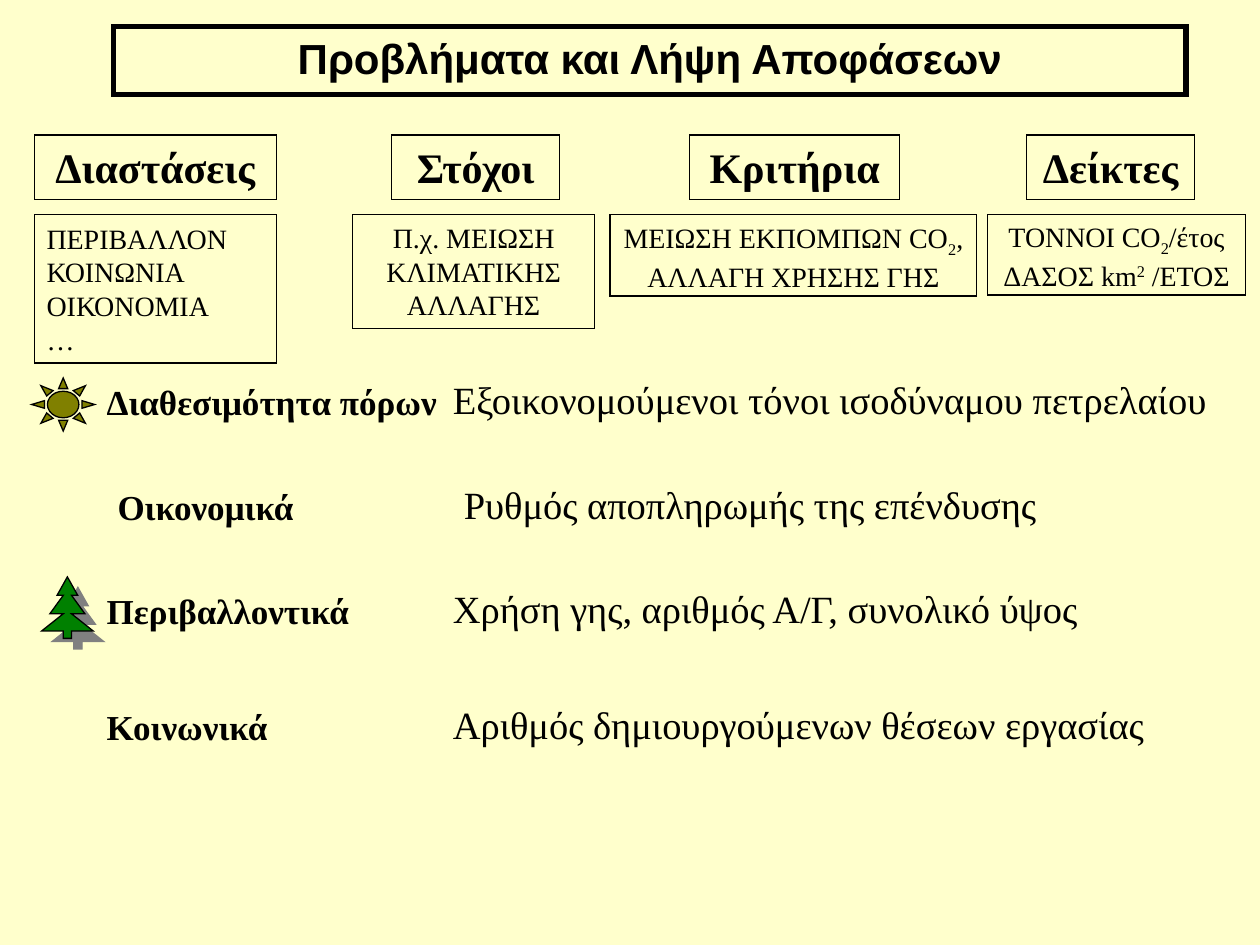
from lxml import etree
from pptx import Presentation
from pptx.dml.color import RGBColor
from pptx.enum.shapes import MSO_SHAPE
from pptx.enum.text import MSO_ANCHOR, PP_ALIGN
from pptx.oxml.ns import qn
from pptx.util import Cm, Pt

COLORS = {"background": "FFFFCC", "ink": "000000", "sun": "808000",
          "tree": "008000", "shadow": "808080"}
SERIF = "Times New Roman"

# Header (text, left, width), then detail (left, width, height, paragraphs).
# A run is a text with its baseline shift in percent.
COLUMNS = [
    (("Διαστάσεις", 0.69, 4.88),
     (0.69, 4.88, 3.0, ["ΠΕΡΙΒΑΛΛΟΝ", "ΚΟΙΝΩΝΙΑ", "ΟΙΚΟΝΟΜΙΑ", "…"])),
    (("Στόχοι", 7.9, 3.38),
     (7.11, 4.88, 2.31, ["Π.χ. ΜΕΙΩΣΗ ΚΛΙΜΑΤΙΚΗΣ ΑΛΛΑΓΗΣ"])),
    (("Κριτήρια", 13.9, 4.24),
     (12.3, 7.39, 1.65, [[("ΜΕΙΩΣΗ ΕΚΠΟΜΠΩΝ CO", 0), ("2", -25), (",", 0)],
                         "ΑΛΛΑΓΗ ΧΡΗΣΗΣ ΓΗΣ"])),
    (("Δείκτες", 20.7, 3.38),
     (19.91, 5.2, 1.63, [[("ΤΟΝΝΟΙ CO", 0), ("2", -25), ("/έτος", 0)],
                         [("ΔΑΣΟΣ km", 0), ("2", 30), (" /ΕΤΟΣ", 0)]])),
]

# Top, indent, label, value
ROWS = [
    (7.42, 0, "Διαθεσιμότητα πόρων", "Εξοικονομούμενοι τόνοι ισοδύναμου πετρελαίου"),
    (9.53, 0.22, "Οικονομικά", "Ρυθμός αποπληρωμής της επένδυσης"),
    (11.63, 0, "Περιβαλλοντικά", "Χρήση γης, αριθμός Α/Γ, συνολικό ύψος"),
    (13.97, 0, "Κοινωνικά", "Αριθμός δημιουργούμενων θέσεων εργασίας"),
]


def color(name):
    return RGBColor.from_string(COLORS[name])


def style(sp, fill=None, width=0.75):
    sp.shadow.inherit = False
    if fill:
        sp.fill.solid()
        sp.fill.fore_color.rgb = color(fill)
    else:
        sp.fill.background()
    sp.line.color.rgb = color("ink")
    sp.line.width = Pt(width)
    # Sharp corners
    etree.SubElement(sp._element.spPr.find(qn("a:ln")), qn("a:miter"), lim="800000")


def write(sp, paragraphs, size, bold=False, font=SERIF, align=PP_ALIGN.LEFT,
          side=0.25, bottom=0.15):
    tf = sp.text_frame
    tf.word_wrap = True
    tf.vertical_anchor = MSO_ANCHOR.BOTTOM
    tf.margin_left = tf.margin_right = Cm(side)
    tf.margin_top, tf.margin_bottom = Cm(0), Cm(bottom)
    for i, runs in enumerate(paragraphs):
        p = tf.add_paragraph() if i else tf.paragraphs[0]
        p.alignment = align
        p.font.name, p.font.size, p.font.bold = font, Pt(size), bold
        p.font.color.rgb = color("ink")
        for text, shift in [(runs, 0)] if isinstance(runs, str) else runs:
            r = p.add_run()
            r.text = text
            if shift:
                r.font._element.set("baseline", str(shift * 1000))


def add_box(s, x, y, w, h, paragraphs, size, line=0.75, **options):
    sp = s.shapes.add_shape(MSO_SHAPE.RECTANGLE, Cm(x), Cm(y), Cm(w), Cm(h))
    style(sp, width=line)
    write(sp, paragraphs, size, **options)


def add_column(s, y, header, detail):
    text, x, w = header
    add_box(s, x, y, w, 1.3, [text], 24, bold=True, align=PP_ALIGN.CENTER)
    x, w, h, paragraphs = detail
    listing = len(paragraphs) > 2
    add_box(s, x, y + 1.6, w, h, paragraphs, 16,
            align=PP_ALIGN.LEFT if listing else PP_ALIGN.CENTER,
            side=0.25 if listing else 0.2,
            bottom=0.07 if len(paragraphs) == 2 else 0.15)


def add_row(s, x, y, label, value):
    for dx, w, text, size, bold in ((0, 8, label, 20, True),
                                    (6.98, 16.2, value, 22, False)):
        sp = s.shapes.add_textbox(Cm(x + dx), Cm(y), Cm(w), Cm(1.27))
        write(sp, [text], size, bold=bold, bottom=0.17)


def add_sun(s, x, y, w, h):
    sp = s.shapes.add_shape(MSO_SHAPE.SUN, Cm(x), Cm(y), Cm(w), Cm(h))
    style(sp, "sun")


def add_tree(s, x, y, w, h):
    # Right half from the tip down, as shares of the box; the left mirrors it
    half = [(0.2, 0.3), (0.08, 0.3), (0.34, 0.6), (0.08, 0.6),
            (0.5, 0.88), (0.08, 0.88), (0.08, 1)]
    outline = half + [(-dx, dy) for dx, dy in reversed(half)]
    points = [(Cm(x + w * (0.5 + dx)), Cm(y + h * dy)) for dx, dy in outline]
    builder = s.shapes.build_freeform(Cm(x + w / 2), Cm(y))
    builder.add_line_segments(points, close=True)
    sp = builder.convert_to_shape()
    style(sp, "tree")
    effects = sp._element.spPr.find(qn("a:effectLst"))
    shadow = etree.SubElement(effects, qn("a:outerShdw"), dist=str(Pt(8.5)),
                              dir="2700000", algn="ctr", rotWithShape="0")
    etree.SubElement(shadow, qn("a:srgbClr"), val=COLORS["shadow"])


def main():
    prs = Presentation()
    prs.slide_width, prs.slide_height = Cm(25.4), Cm(19.05)
    s = prs.slides.add_slide(prs.slide_layouts[6])
    s.background.fill.solid()
    s.background.fill.fore_color.rgb = color("background")

    # Title
    add_box(s, 2.29, 0.53, 21.62, 1.37, ["Προβλήματα και Λήψη Αποφάσεων"], 24,
            line=3, bold=True, font="Arial", align=PP_ALIGN.CENTER, bottom=0.22)

    # Columns with their details
    for header, detail in COLUMNS:
        add_column(s, 2.72, header, detail)

    # Criteria rows and their icons
    for y, indent, label, value in ROWS:
        add_row(s, 1.9 + indent, y, label, value)
    add_sun(s, 0.64, 7.62, 1.27, 1.07)
    add_tree(s, 0.84, 11.63, 1.04, 1.24)

    prs.save("out.pptx")


if __name__ == "__main__":
    main()
